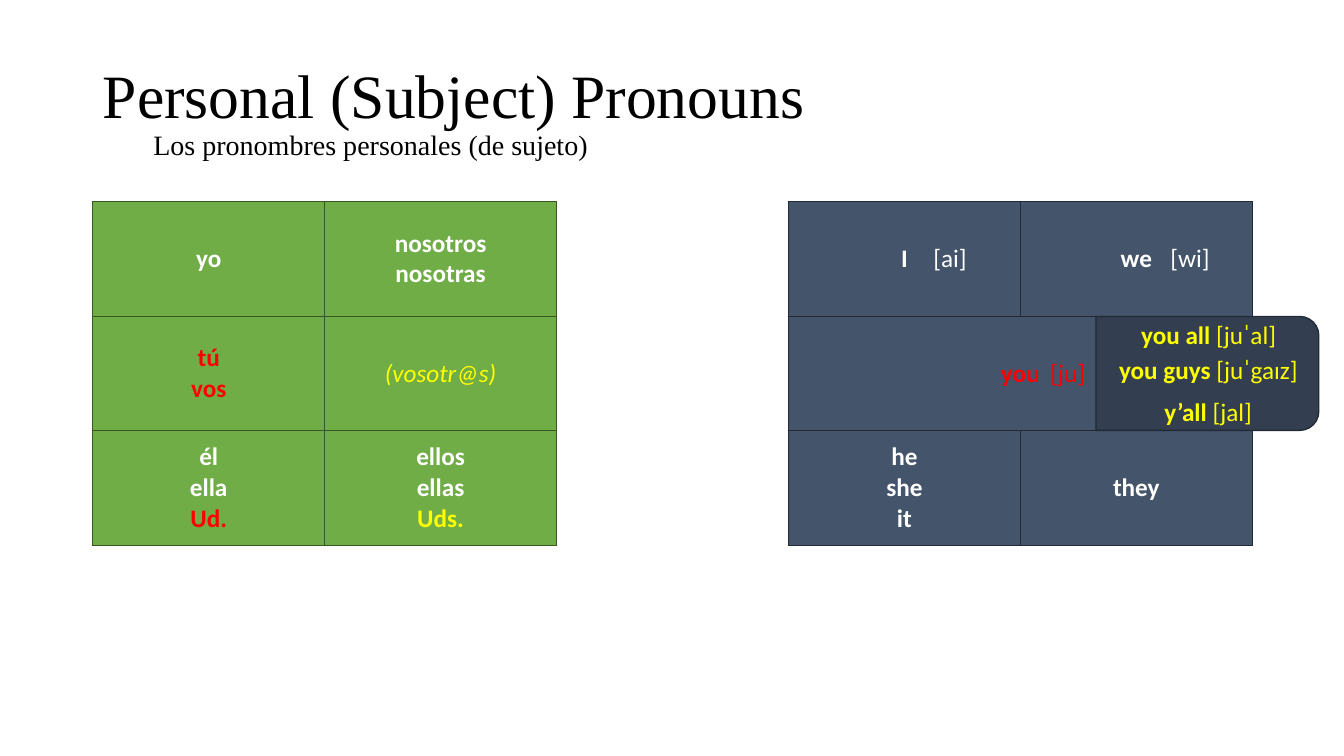
from dataclasses import dataclass

from lxml import etree
from pptx import Presentation
from pptx import util as u
from pptx.dml.color import RGBColor
from pptx.enum import shapes, text
from pptx.oxml.ns import qn


@dataclass(frozen=True)
class Theme:
    serif: str = "Times New Roman"
    sans: str = "Calibri"
    head: int = 44
    sub: int = 20
    body: int = 18
    black: str = "000000"
    white: str = "FFFFFF"
    red: str = "FF0000"
    yellow: str = "FFFF00"
    green: str = "70AD47"
    moss: str = "385723"
    slate: str = "44546A"
    navy: str = "222A35"
    dark: str = "333F50"


T = Theme()


@dataclass(frozen=True)
class Bit:
    words: str
    color: str = T.white
    bold: bool = True
    slant: bool = False
    size: int = T.body


@dataclass(frozen=True)
class Label:
    left: float
    top: float
    width: float
    bits: list[Bit]


@dataclass(frozen=True)
class Side:
    col: int
    fill: str
    edge: str
    rows: list[list[list[Bit]]]


def write(frame, lines: list[list[Bit]], font: str = T.sans, align=text.PP_ALIGN.LEFT,
          space: float = 1.0) -> None:
    for n, line in enumerate(lines):
        para = frame.add_paragraph() if n else frame.paragraphs[0]
        para.alignment = align
        para.line_spacing = space
        for bit in line:
            if bit.words == "\n":
                para.add_line_break()
                continue
            run = para.add_run()
            run.text = bit.words
            run.font.name = font
            run.font.size = u.Pt(bit.size)
            run.font.bold = bit.bold
            run.font.italic = bit.slant
            run.font.color.rgb = RGBColor.from_string(bit.color)


def border(cell, edges: dict[str, str]) -> None:
    props = cell._tc.get_or_add_tcPr()
    for side, color in edges.items():
        line = etree.SubElement(props, qn(f"a:ln{side}"), w=str(u.Pt(1)))
        fill = etree.SubElement(line, qn("a:solidFill"))
        etree.SubElement(fill, qn("a:srgbClr"), val=color)


def draw_title(slide) -> None:
    title = slide.shapes.title
    title.left, title.top = u.Inches(0.92), u.Inches(0.4)
    title.width, title.height = u.Inches(11.5), u.Inches(1.45)
    frame = title.text_frame
    frame.auto_size = text.MSO_AUTO_SIZE.NONE
    frame.vertical_anchor = text.MSO_ANCHOR.MIDDLE
    write(frame, [[
        Bit("Personal (Subject) Pronouns", T.black, False, size=T.head),
        Bit("\n"),
        Bit("\tLos pronombres personales (de sujeto)", T.black, False, size=T.sub),
    ]], font=T.serif, space=0.9)


def draw_table(slide, sides: list[Side]) -> None:
    frame = slide.shapes.add_table(3, 5, u.Inches(0.92), u.Inches(2),
                                   u.Inches(11.5), u.Inches(3.41))
    grid = frame.table
    grid.first_row = grid.horz_banding = False
    style = grid._tbl.tblPr.find(qn("a:tableStyleId"))
    style.text = "{2D5ABB26-0587-4C30-8999-92F81FD0307C}"
    for row in grid.rows:
        row.height = u.Inches(3.41 / 3)
    for side in sides:
        for r, row in enumerate(side.rows):
            for c, lines in enumerate(row, side.col):
                cell = grid.cell(r, c)
                border(cell, dict.fromkeys("LRTB", side.edge))
                cell.fill.solid()
                cell.fill.fore_color.rgb = RGBColor.from_string(side.fill)
                cell.vertical_anchor = text.MSO_ANCHOR.MIDDLE
                write(cell.text_frame, lines, align=text.PP_ALIGN.CENTER)
    for r in range(3):
        gap = grid.cell(r, 2)
        border(gap, {"L": T.moss, "R": T.navy})
        gap.fill.background()
    grid.cell(1, 3).merge(grid.cell(1, 4))


def draw_flag(slide) -> None:
    flag = slide.shapes.add_shape(shapes.MSO_SHAPE.ROUND_2_SAME_RECTANGLE, u.Inches(11.41),
                                  u.Inches(2.6), u.Inches(1.13), u.Inches(2.21))
    flag.rotation = 90
    flag.shadow.inherit = False
    flag.fill.solid()
    flag.fill.fore_color.rgb = RGBColor.from_string(T.dark)
    flag.line.color.rgb = RGBColor.from_string(T.navy)
    flag.line.width = u.Pt(1)


def draw_label(slide, label: Label) -> None:
    box = slide.shapes.add_textbox(u.Inches(label.left), u.Inches(label.top),
                                   u.Inches(label.width), u.Inches(0.4))
    box.text_frame.word_wrap = False
    box.text_frame.auto_size = text.MSO_AUTO_SIZE.SHAPE_TO_FIT_TEXT
    write(box.text_frame, [label.bits])


def plural(words: str, sound: str) -> list[Bit]:
    return [Bit(words, T.yellow), Bit(sound, T.yellow, False)]


SIDES = [
    Side(0, T.green, T.moss, [
        [[[Bit("yo")]], [[Bit("nosotros")], [Bit("nosotras")]]],
        [[[Bit("tú", T.red)], [Bit("vos", T.red)]],
         [[Bit("(vosotr@s)", T.yellow, False, True)]]],
        [[[Bit("él")], [Bit("ella")], [Bit("Ud.", T.red)]],
         [[Bit("ellos")], [Bit("ellas")], [Bit("Uds.", T.yellow)]]],
    ]),
    Side(3, T.slate, T.navy, [
        [[[Bit("I")]], [[Bit("we")]]],
        [[[Bit("you", T.red)]], []],
        [[[Bit("he")], [Bit("she")], [Bit("it")]], [[Bit("they")]]],
    ]),
]
SOUNDS = [
    Label(9.16, 2.35, 0.54, [Bit("[ai]", bold=False)]),
    Label(11.51, 2.35, 0.59, [Bit("[wi]", bold=False)]),
    Label(10.32, 3.5, 0.55, [Bit("[ju]", T.red, False)]),
]
FORMS = [
    Label(11.22, 3.12, 1.55, plural("you all ", "[juˈal]")),
    Label(11, 3.47, 1.99, plural("you guys ", "[juˈgaɪz]")),
    Label(11.45, 3.88, 1.08, plural("y’all ", "[jal]")),
]


def main() -> None:
    deck = Presentation()
    deck.slide_width, deck.slide_height = u.Inches(13.33), u.Inches(7.5)
    slide = deck.slides.add_slide(deck.slide_layouts[5])
    draw_title(slide)
    draw_table(slide, SIDES)
    for label in SOUNDS:
        draw_label(slide, label)
    draw_flag(slide)
    for label in FORMS:
        draw_label(slide, label)
    deck.save("out.pptx")


if __name__ == "__main__":
    main()
